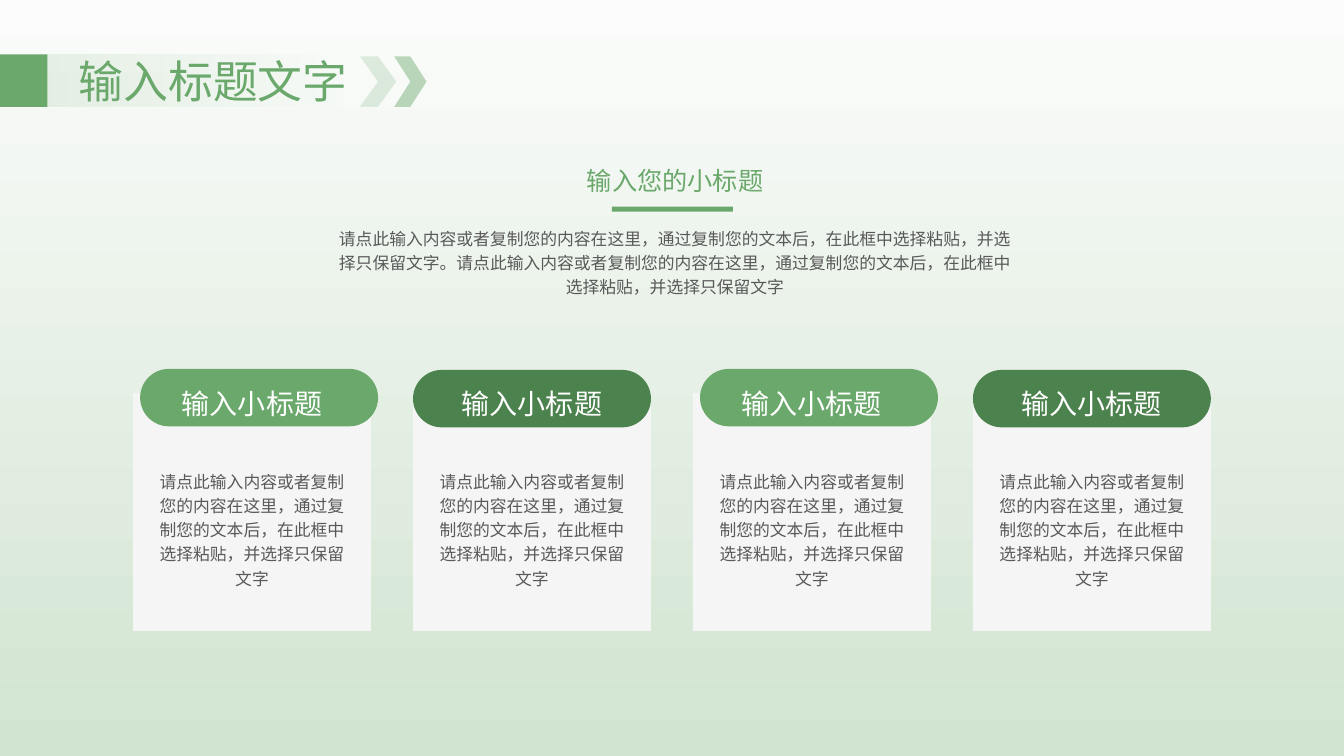
"""Build a green title slide with an introduction and four captioned cards."""
from lxml import etree
from pptx import Presentation
from pptx import util as u
from pptx.dml.color import RGBColor
from pptx.enum import shapes, text
from pptx.oxml.ns import qn

TITLE = "输入标题文字"
SUBTITLE = "输入您的小标题"
BODY = "请点此输入内容或者复制您的内容在这里，通过复制您的文本后，在此框中选择粘贴，并选择只保留文字"
INTRO = "。".join([BODY, BODY])
CARDS = [
    ("输入小标题", BODY, "green", (0.07, -0.01)),
    ("输入小标题", BODY, "dark", (0, 0)),
    ("输入小标题", BODY, "green", (0.07, -0.01)),
    ("输入小标题", BODY, "dark", (0, 0)),
]
COLORS = {"green": "6AA86B", "dark": "4C824D", "card": "F5F5F5", "gray": "595959",
          "white": "FFFFFF", "top": "FBFCFB", "bottom": "D1E4D1"}
FONT = "Noto Sans CJK SC"
W, H = 13.33, 7.5
MARGIN, CARD, CARD_TOP = 1.32, 2.36, 3.9
PILL_TOP, PILL_H = 3.67, 0.57
LABEL_W, BODY_W = 1.6, 2.14
BAR_TOP, BAR_H, TAB_W = 0.54, 0.52, 0.47
CHEVRONS = [(3.57, 0.36, 20), (3.91, 0.32, 44)]

STYLES = {
    "title": {"size": 32, "color": "green", "align": "LEFT", "spacing": 1.0, "wrap": True},
    "subtitle": {"size": 18, "color": "green", "align": "CENTER", "spacing": 1.0, "wrap": True},
    "label": {"size": 20, "color": "white", "align": "CENTER", "spacing": 1.5, "wrap": False},
    "body": {"size": 12, "color": "gray", "align": "CENTER", "spacing": 1.2, "wrap": True},
}


def rgb(name):
    return RGBColor.from_string(COLORS[name])


def set_alpha(clr, percent):
    etree.SubElement(clr, qn("a:alpha"), val=str(percent * 1000))


def set_gradient(fill, names, angle):
    fill.gradient()
    fill.gradient_angle = angle
    for stop, name in zip(fill.gradient_stops, names):
        stop.color.rgb = rgb(name)


def add_block(s, kind, box, color, alpha=None):
    sp = s.shapes.add_shape(kind, *map(u.Inches, box))
    sp.shadow.inherit = False
    sp.line.fill.background()
    sp.fill.solid()
    sp.fill.fore_color.rgb = rgb(color)
    if alpha is not None:
        set_alpha(next(sp.element.spPr.iter(qn("a:srgbClr"))), alpha)
    return sp


def write(sp, words, style):
    st = STYLES[style]
    tf = sp.text_frame
    frame = {"word_wrap": st["wrap"], "vertical_anchor": text.MSO_ANCHOR.TOP,
             "auto_size": text.MSO_AUTO_SIZE.SHAPE_TO_FIT_TEXT}
    p = tf.paragraphs[0]
    para = {"alignment": text.PP_ALIGN[st["align"]], "line_spacing": st["spacing"],
            "space_before": u.Pt(0)}
    r = p.add_run()
    r.text = words
    font = {"size": u.Pt(st["size"]), "name": FONT}
    for target, values in ((tf, frame), (p, para), (r.font, font)):
        for key, value in values.items():
            setattr(target, key, value)
    r.font.color.rgb = rgb(st["color"])
    etree.SubElement(r.font._element, qn("a:ea"), typeface=FONT)


def add_text(s, box, words, style):
    write(s.shapes.add_textbox(*map(u.Inches, box)), words, style)


def add_cards(s):
    kinds = shapes.MSO_SHAPE
    step = (W - 2 * MARGIN - CARD) / (len(CARDS) - 1)
    for i, (label, body, color, (dx, dy)) in enumerate(CARDS):
        x = MARGIN + i * step
        add_block(s, kinds.RECTANGLE, (x, CARD_TOP, CARD, CARD), "card")
        pill = add_block(s, kinds.ROUNDED_RECTANGLE,
                         (x + dx, PILL_TOP + dy, CARD, PILL_H), color)
        pill.adjustments[0] = 0.5
        add_text(s, (x + (CARD - LABEL_W) / 2, 3.62, LABEL_W, 0.55), label, "label")
        add_text(s, (x + (CARD - BODY_W) / 2, 4.59, BODY_W, 1.3), body, "body")


def add_intro(s):
    add_text(s, (3.22, 2.18, 6.95, 0.83), INTRO, "body")
    add_text(s, (4.22, 1.59, 4.95, 0.4), SUBTITLE, "subtitle")
    add_block(s, shapes.MSO_SHAPE.RECTANGLE, (6.07, 2.05, 1.2, 0.05), "green")


def add_header(s):
    kinds = shapes.MSO_SHAPE
    band = add_block(s, kinds.RECTANGLE, (TAB_W, BAR_TOP, 3.05, BAR_H), "green")
    set_gradient(band.fill, ("green", "green"), 0)
    for clr, alpha in zip(band.element.spPr.iter(qn("a:srgbClr")), (14, 0)):
        set_alpha(clr, alpha)
    title = s.shapes.title
    for key, value in zip(("left", "top", "width", "height"), (0.68, 0.48, 3.45, 0.64)):
        setattr(title, key, u.Inches(value))
    write(title, TITLE, "title")
    band.element.addnext(title.element)
    add_block(s, kinds.RECTANGLE, (0, BAR_TOP, TAB_W, BAR_H), "green")
    for x, width, alpha in CHEVRONS:
        add_block(s, kinds.CHEVRON, (x, 0.56, width, 0.5), "green", alpha)


def main():
    prs = Presentation()
    prs.slide_width, prs.slide_height = u.Inches(W), u.Inches(H)
    s = prs.slides.add_slide(prs.slide_layouts.get_by_name("Title Only"))
    set_gradient(s.background.fill, ("top", "bottom"), 270)
    add_cards(s)
    add_intro(s)
    add_header(s)
    prs.save("out.pptx")


if __name__ == "__main__":
    main()
